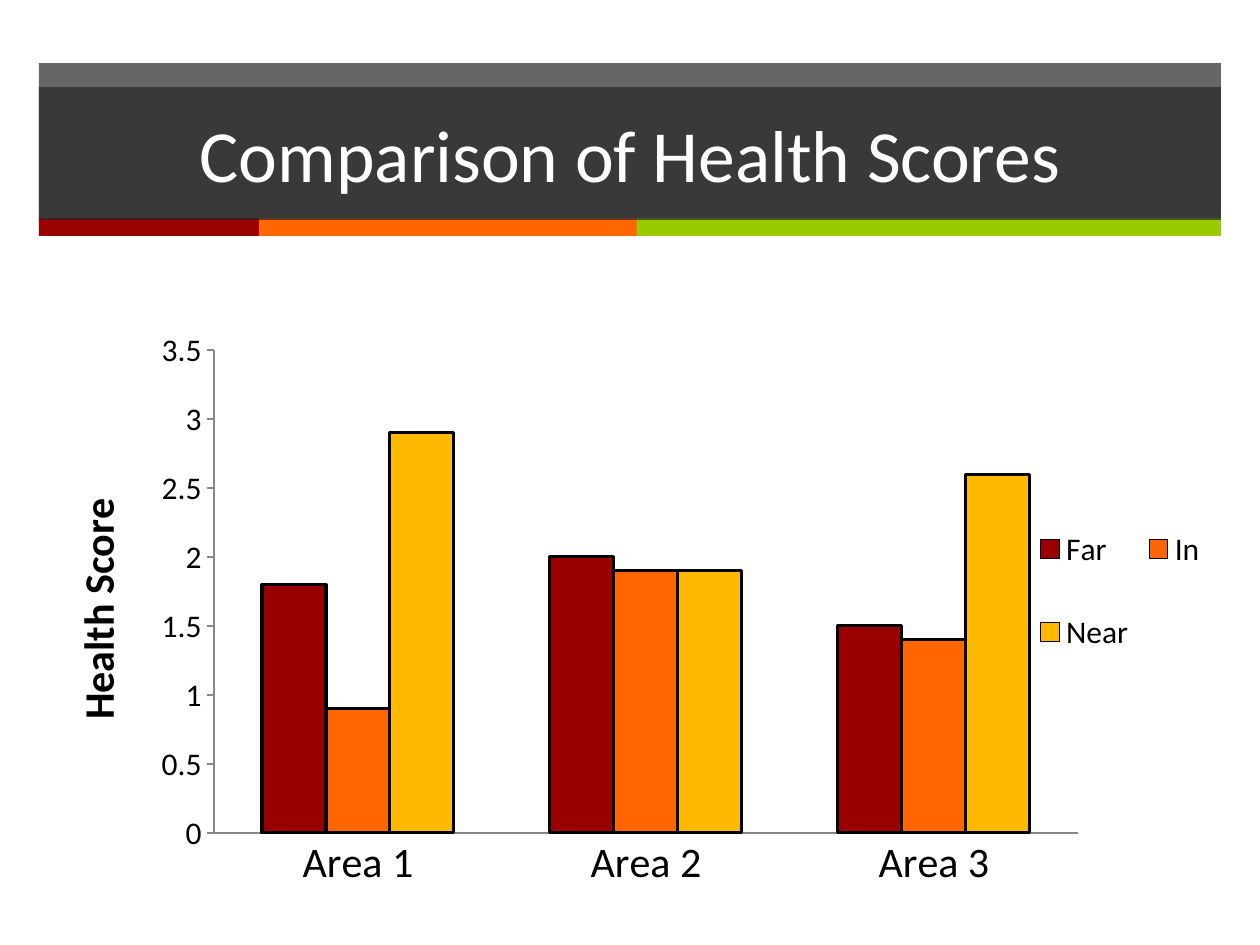
from lxml import etree
from pptx import Presentation
from pptx.chart.data import CategoryChartData
from pptx.dml.color import RGBColor
from pptx.enum.chart import XL_CHART_TYPE, XL_LEGEND_POSITION, XL_TICK_MARK
from pptx.enum.shapes import MSO_SHAPE
from pptx.enum.text import MSO_ANCHOR, PP_ALIGN
from pptx.oxml.ns import qn
from pptx.util import Emu, Pt

PX = 914400 // 126
RECTANGLE = MSO_SHAPE.RECTANGLE
COLUMNS = XL_CHART_TYPE.COLUMN_CLUSTERED
LEGEND_RIGHT = XL_LEGEND_POSITION.RIGHT
TICK_NONE, TICK_OUT = XL_TICK_MARK.NONE, XL_TICK_MARK.OUTSIDE
MIDDLE, CENTER = MSO_ANCHOR.MIDDLE, PP_ALIGN.CENTER

FONT = "Calibri"
COLORS = {
    "band": "262626",
    "red": "990000",
    "orange": "FF6600",
    "green": "99CC00",
    "amber": "FFBA00",
    "black": "000000",
    "white": "FFFFFF",
    "axis": "878787",
}
LEFT, WIDTH = 39, 1182
CHART_TOP, CHART_HEIGHT = 319, 582
STRIPES = [("red", 220), ("orange", 378), ("green", 584)]
AREAS = ["Area 1", "Area 2", "Area 3"]
SCORES = [
    ("Far", "red", [1.8, 2.0, 1.5]),
    ("In", "orange", [0.9, 1.9, 1.4]),
    ("Near", "amber", [2.9, 1.9, 2.6]),
]


def px(length):
    """Turn whole pixels into EMU."""
    return Emu(length * PX)


def rgb(name):
    """Look up a named colour."""
    return RGBColor.from_string(COLORS[name])


def style_font(font, size, color="black", bold=False):
    """Set the face, size, weight and colour of a font."""
    font.name, font.size, font.bold = FONT, Pt(size), bold
    font.color.rgb = rgb(color)


def add_bar(slide, left, top, width, height, color, opacity=100):
    """Add a borderless rectangle, translucent when opacity is below 100."""
    bar = slide.shapes.add_shape(RECTANGLE, px(left), px(top), px(width), px(height))
    bar.shadow.inherit = False
    bar.fill.solid()
    bar.fill.fore_color.rgb = rgb(color)
    bar.line.fill.background()
    if opacity < 100:
        swatch = bar.fill._xPr.find(".//" + qn("a:srgbClr"))
        etree.SubElement(swatch, qn("a:alpha"), val=str(opacity * 1000))
    return bar


def add_header(slide, heading):
    """Add the dark title band with its coloured stripes."""
    add_bar(slide, LEFT, 63, WIDTH, 156, "band", 70)
    left = LEFT
    for color, width in STRIPES:
        add_bar(slide, left, 218, width, 18, color)
        left += width
    title_frame = add_bar(slide, LEFT, 87, WIDTH, 133, "band", 70).text_frame
    title_frame.text = heading
    title_frame.word_wrap = True
    title_frame.vertical_anchor = MIDDLE
    paragraph = title_frame.paragraphs[0]
    paragraph.alignment = CENTER
    style_font(paragraph.runs[0].font, 42, "white")


def place(element, index, left, top, size=None, target=None):
    """Lay out a chart part at slide pixels, as fractions of the chart."""
    for old in element.findall(qn("c:layout")):
        element.remove(old)
    settings = {"layoutTarget": target} if target else {}
    settings.update(xMode="edge", yMode="edge",
                    x=(left - LEFT) / WIDTH, y=(top - CHART_TOP) / CHART_HEIGHT)
    if size:
        settings.update(w=size[0] / WIDTH, h=size[1] / CHART_HEIGHT)
    layout = etree.Element(qn("c:layout"))
    manual = etree.SubElement(layout, qn("c:manualLayout"))
    for tag, value in settings.items():
        etree.SubElement(manual, qn("c:" + tag), val=str(value))
    element.insert(index, layout)


def style_axis(axis, size, tick):
    """Set the line, tick marks and labels of an axis."""
    axis.has_major_gridlines = False
    axis.major_tick_mark, axis.minor_tick_mark = tick, TICK_NONE
    axis.format.line.color.rgb = rgb("axis")
    axis.format.line.width = Pt(0.75)
    style_font(axis.tick_labels.font, size)


def add_score_chart(slide):
    """Add the clustered columns of health scores."""
    data = CategoryChartData()
    data.categories = AREAS
    for name, _, values in SCORES:
        data.add_series(name, values)
    chart = slide.shapes.add_chart(
        COLUMNS, px(LEFT), px(CHART_TOP), px(WIDTH), px(CHART_HEIGHT), data
    ).chart
    chart.has_title = False
    style_font(chart.font, 10)

    plot = chart.plots[0]
    plot.gap_width, plot.overlap = 150, 0
    plot.vary_by_categories = False
    for series, (_, color, _) in zip(plot.series, SCORES):
        series.format.fill.solid()
        series.format.fill.fore_color.rgb = rgb(color)
        series.format.line.color.rgb = rgb("black")
        series.format.line.width = Pt(1.75)

    style_axis(chart.category_axis, 24, TICK_NONE)
    scores = chart.value_axis
    style_axis(scores, 18, TICK_OUT)
    scores.minimum_scale, scores.maximum_scale, scores.major_unit = 0, 3.5, 0.5
    scores.tick_labels.number_format = "General"
    scores.tick_labels.number_format_is_linked = False
    caption = scores.axis_title
    caption.text_frame.text = "Health Score"
    style_font(caption.text_frame.paragraphs[0].runs[0].font, 24, bold=True)

    chart.has_legend = True
    chart.legend.position = LEGEND_RIGHT
    chart.legend.include_in_layout = False
    style_font(chart.legend.font, 18)

    plot_area = chart._chartSpace.find(".//" + qn("c:plotArea"))
    place(plot_area, 0, 214, 350, (864, 483), "inner")
    place(caption._element, 1, 62, 491)
    place(chart.legend._element, 1, 1030, 485, (180, 211))


def main():
    """Build and save the slide."""
    deck = Presentation()
    deck.slide_width, deck.slide_height = px(1260), px(945)
    slide = deck.slides.add_slide(deck.slide_layouts[6])
    add_header(slide, "Comparison of Health Scores")
    add_score_chart(slide)
    deck.save("out.pptx")


if __name__ == "__main__":
    main()
